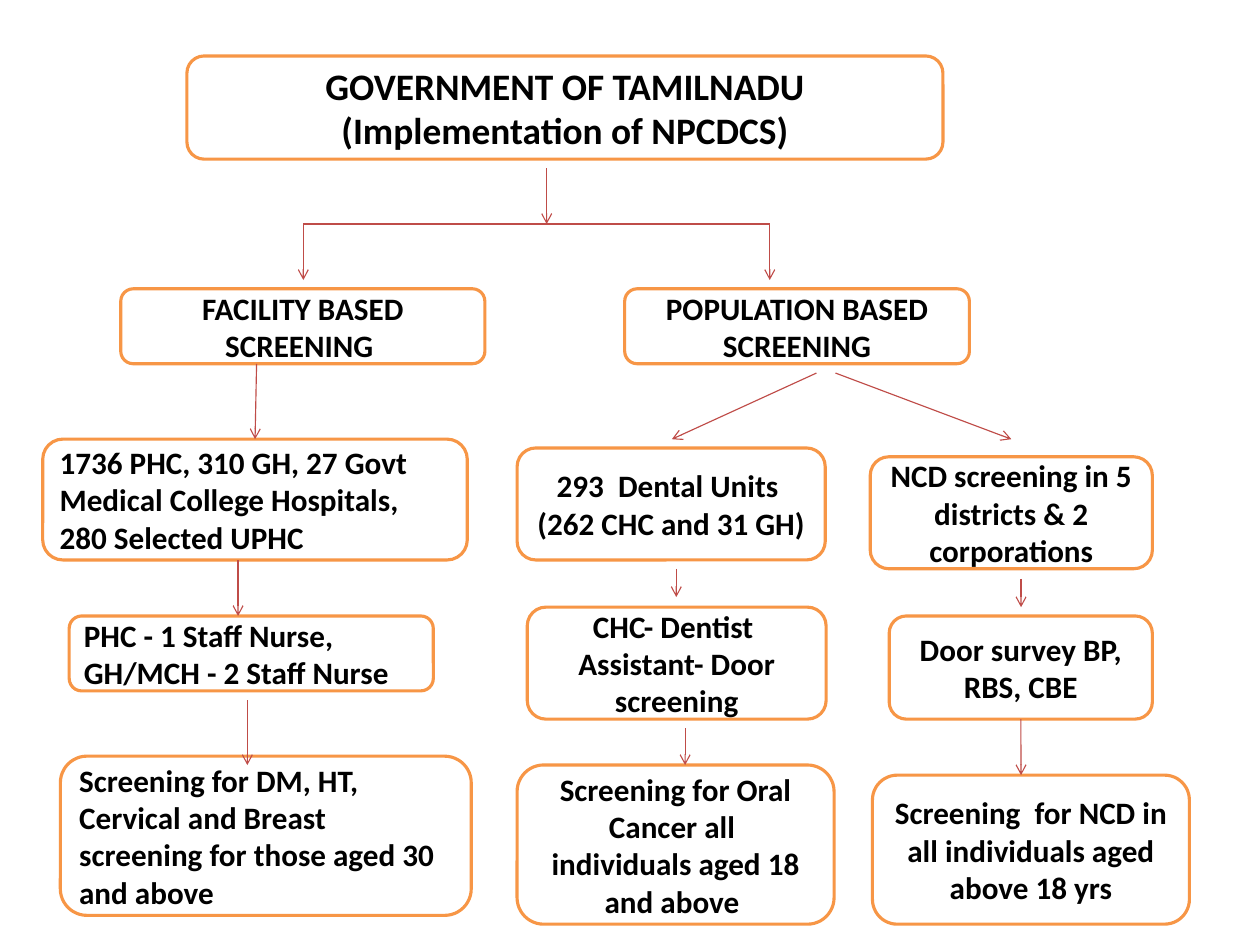
"""Draw the flow chart of NPCDCS screening in Tamilnadu."""
from lxml.etree import SubElement
from pptx import Presentation
from pptx.dml.color import RGBColor
from pptx.enum.shapes import MSO_CONNECTOR, MSO_SHAPE
from pptx.enum.text import MSO_ANCHOR, PP_ALIGN
from pptx.oxml.ns import qn
from pptx.util import Cm, Pt

HUES = {"fill": "FFFFFF", "edge": "F79646", "text": "000000", "line": "BF4C48"}
LEFT, MID = PP_ALIGN.LEFT, PP_ALIGN.CENTER
TOP, BASE = 0, 2


def hue(name):
    return RGBColor.from_string(HUES[name])


def add_box(slide, area, rows, align=MID, size=20):
    box = slide.shapes.add_shape(MSO_SHAPE.ROUNDED_RECTANGLE, *map(Cm, area))
    box.shadow.inherit = False
    box.fill.solid()
    box.fill.fore_color.rgb = hue("fill")
    box.line.color.rgb = hue("edge")
    box.line.width = Pt(2)
    frame = box.text_frame
    frame.word_wrap = True
    frame.vertical_anchor = MSO_ANCHOR.MIDDLE
    for i, row in enumerate(rows):
        para = frame.add_paragraph() if i else frame.paragraphs[0]
        para.alignment = align
        run = para.add_run()
        run.text = row
        run.font.name = "Calibri"
        run.font.size = Pt(size)
        run.font.bold = True
        run.font.color.rgb = hue("text")
    return box


def add_line(slide, start, end, head=True):
    line = slide.shapes.add_connector(
        MSO_CONNECTOR.STRAIGHT, *map(Cm, (*start, *end)))
    line.line.color.rgb = hue("line")
    line.line.width = Pt(0.75)
    if head:
        SubElement(line.line._get_or_add_ln(), qn("a:tailEnd"), type="arrow")
    SubElement(line._element.spPr, qn("a:effectLst"))
    return line


def add_drop(slide, x, top, base):
    return add_line(slide, (x, top), (x, base))


def main():
    deck = Presentation()
    deck.slide_width, deck.slide_height = Cm(28.58), Cm(21.59)
    slide = deck.slides.add_slide(deck.slide_layouts[6])

    add_box(slide, (4.24, 1.27, 17.15, 2.34),
            ["GOVERNMENT OF TAMILNADU", "(Implementation of NPCDCS)"], size=24)
    add_box(slide, (2.74, 6.55, 8.26, 1.7), ["FACILITY BASED SCREENING "])
    add_box(slide, (14.17, 6.55, 7.82, 1.7), ["POPULATION BASED SCREENING"])

    sites = add_box(slide, (0.97, 9.96, 9.63, 2.74),
                    ["1736 PHC, 310 GH, 27 Govt Medical College Hospitals,",
                     "280 Selected UPHC"], LEFT)
    add_box(slide, (1.57, 13.97, 8.26, 1.7),
            ["PHC - 1 Staff Nurse,", "GH/MCH - 2 Staff Nurse"], LEFT)
    add_box(slide, (1.37, 17.15, 9.32, 3.61),
            ["Screening for DM, HT, Cervical and Breast screening "
             "for those aged 30 and above"], LEFT)

    add_box(slide, (11.73, 10.16, 6.99, 2.54),
            ["293  Dental Units ", "(262 CHC and 31 GH)"])
    add_box(slide, (11.96, 13.77, 6.78, 2.54),
            ["CHC- Dentist ", "Assistant- Door screening"])
    add_box(slide, (11.73, 17.35, 7.19, 3.61),
            ["Screening for Oral Cancer all  individuals aged 18 and above "])

    add_box(slide, (19.74, 10.36, 6.4, 2.54),
            ["NCD screening in 5 districts & 2 corporations"])
    door = add_box(slide, (20.17, 13.97, 5.97, 2.34),
                   ["Door survey BP, RBS, CBE"])
    add_box(slide, (19.79, 17.58, 7.19, 3.38),
            ["Screening  for NCD in all individuals aged above 18 yrs"])

    add_line(slide, (6.88, 5.08), (17.46, 5.08), False)
    add_drop(slide, 12.4, 3.81, 5.08)
    for x in (6.88, 17.46):
        add_drop(slide, x, 5.08, 6.35)
    add_line(slide, (5.82, 8.25), (5.78, 9.96)).end_connect(sites, TOP)
    add_line(slide, (18.52, 8.46), (15.24, 9.96))
    add_line(slide, (18.95, 8.46), (22.94, 9.96))
    for x, top, base in ((5.4, 12.7, 13.97), (5.61, 15.88, 17.35),
                         (15.34, 12.9, 13.54), (15.54, 16.51, 17.35),
                         (23.16, 13.13, 13.77)):
        add_drop(slide, x, top, base)
    add_drop(slide, 23.16, 16.31, 17.58).begin_connect(door, BASE)

    deck.save("out.pptx")


if __name__ == "__main__":
    main()
